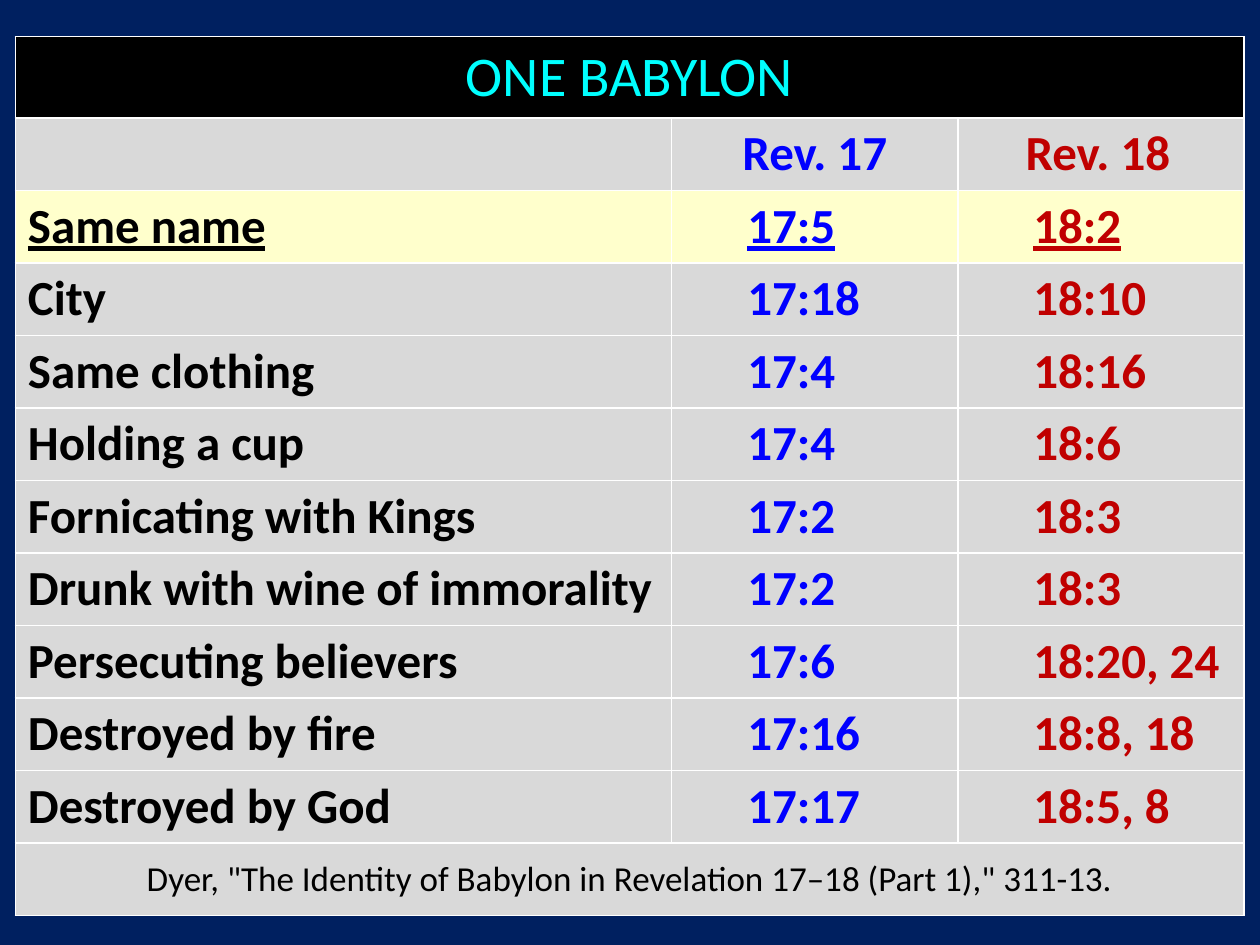
import pptx
import pptx.dml.color
import pptx.enum.text
import pptx.oxml.ns
import pptx.util
from lxml import etree

Cm = pptx.util.Cm
Pt = pptx.util.Pt
Align = pptx.enum.text.PP_ALIGN

TITLE = "ONE BABYLON"
HEADS = ("", "Rev. 17", "Rev. 18")
ROWS = [
    ("Same name", "17:5", "18:2"),
    ("City", "17:18", "18:10"),
    ("Same clothing", "17:4", "18:16"),
    ("Holding a cup", "17:4", "18:6"),
    ("Fornicating with Kings", "17:2", "18:3"),
    ("Drunk with wine of immorality", "17:2", "18:3"),
    ("Persecuting believers", "17:6", "18:20, 24"),
    ("Destroyed by fire", "17:16", "18:8, 18"),
    ("Destroyed by God", "17:17", "18:5, 8"),
]
SOURCE = 'Dyer, "The Identity of Babylon in Revelation 17–18 (Part 1)," 311-13.'

INKS = ("000000", "0000FF", "C00000")
GREY, CREAM, BLACK = "D9D9D9", "FFFFCC", "000000"
WIDTHS = (13.23, 5.77, 5.77)
LEFT, TOP, TALL, HIGH = 0.31, 0.74, 1.63, 1.46


def tint(fill, code):
    fill.solid()
    fill.fore_color.rgb = pptx.dml.color.RGBColor.from_string(code)


def edge(cell):
    props = cell._tc.get_or_add_tcPr()
    for side in ("lnL", "lnR", "lnT", "lnB"):
        line = etree.SubElement(props, pptx.oxml.ns.qn("a:" + side), w=str(Pt(1)))
        solid = etree.SubElement(line, pptx.oxml.ns.qn("a:solidFill"))
        etree.SubElement(solid, pptx.oxml.ns.qn("a:srgbClr"), val="FFFFFF")


def write(cell, text, ink, size=28, bold=True, under=False, align=Align.LEFT, level=0, inset=0):
    cell.vertical_anchor = pptx.enum.text.MSO_ANCHOR.MIDDLE
    para = cell.text_frame.paragraphs[0]
    para.alignment = align
    para.level = level
    if inset:
        props = para._p.get_or_add_pPr()
        props.set("marL", str(Cm(inset)))
        props.set("indent", "0")
    para.font.size = Pt(size)
    if text:
        run = para.add_run()
        run.text = text
        font = run.font
        font.name, font.size, font.bold = "Calibri", Pt(size), bold
        font.underline = under
        tint(font.fill, ink)


def main():
    deck = pptx.Presentation()
    deck.slide_width, deck.slide_height = Cm(25.4), Cm(19.05)
    slide = deck.slides.add_slide(deck.slide_layouts[6])
    tint(slide.background.fill, "002060")

    count = len(ROWS) + 3
    last = count - 1
    frame = slide.shapes.add_table(
        count, len(WIDTHS), Cm(LEFT), Cm(TOP), Cm(sum(WIDTHS)), Cm(TALL + last * HIGH))
    table = frame.table
    for col, width in zip(table.columns, WIDTHS):
        col.width = Cm(width)
    for i, row in enumerate(table.rows):
        row.height = Cm(HIGH if i else TALL)
        for cell in row.cells:
            edge(cell)
            tint(cell.fill, {0: BLACK, 2: CREAM}.get(i, GREY))

    for i in (0, last):
        table.cell(i, 0).merge(table.cell(i, 2))
    write(table.cell(0, 0), TITLE, "00FFFF", size=32, bold=False, align=Align.CENTER)
    write(table.cell(last, 0), SOURCE, BLACK, size=20, bold=False, align=Align.CENTER)

    looks = ({}, {"align": Align.CENTER}, {"inset": 1.11})
    for j, (text, ink, look) in enumerate(zip(HEADS, INKS, looks)):
        write(table.cell(1, j), text, ink, **look)

    for i, row in enumerate(ROWS):
        for j, (text, ink) in enumerate(zip(row, INKS)):
            look = {"level": 1, "inset": 1.27} if j else {}
            write(table.cell(i + 2, j), text, ink, under=i == 0, **look)

    deck.save("out.pptx")


if __name__ == "__main__":
    main()
